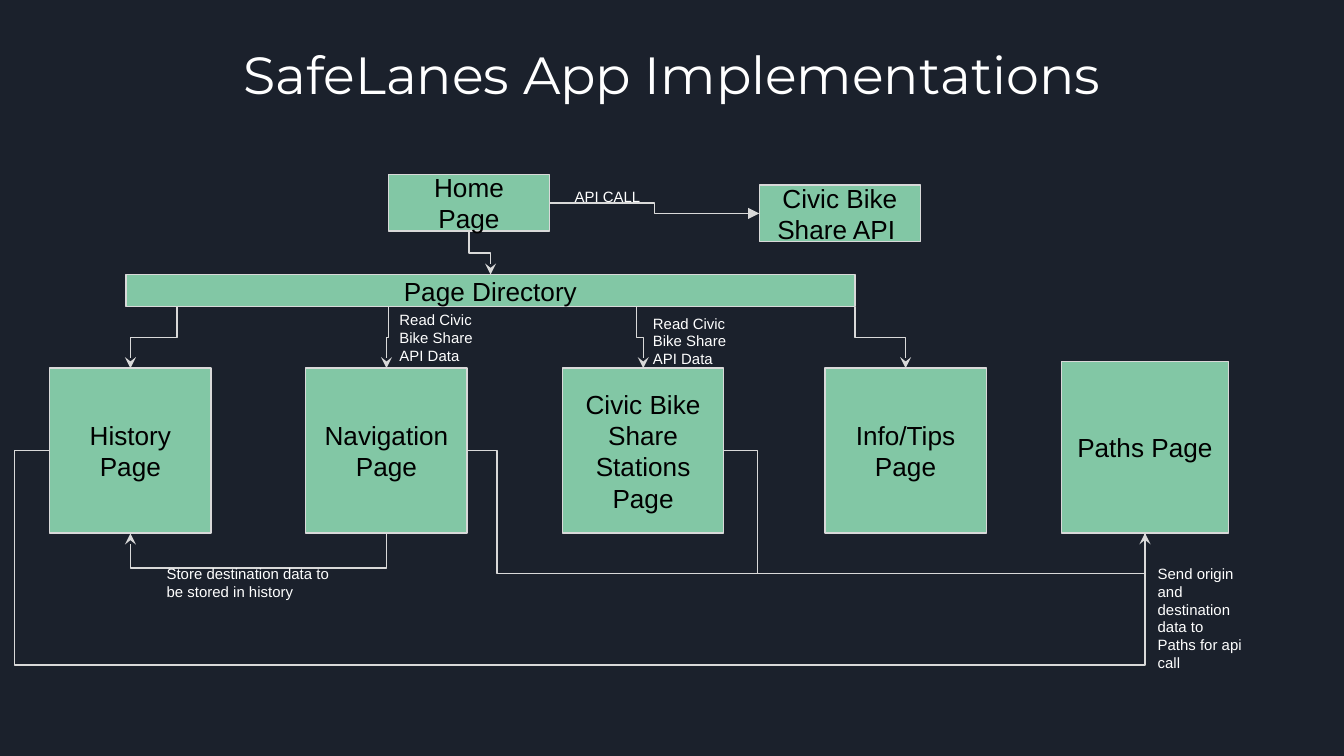
from lxml.etree import SubElement
from pptx import Presentation
from pptx.dml.color import RGBColor
from pptx.enum.shapes import MSO_CONNECTOR as CONN, MSO_SHAPE as SHAPE
from pptx.enum.text import MSO_ANCHOR as ANCHOR, MSO_AUTO_SIZE as AUTO, PP_ALIGN as ALIGN
from pptx.oxml.ns import qn
from pptx.util import Cm, Pt

NAVY = RGBColor(0x1B, 0x21, 0x2C)
GREEN = RGBColor(0x82, 0xC7, 0xA5)
GREY = RGBColor(0xD9, 0xD9, 0xD9)
BLACK = RGBColor(0, 0, 0)
WHITE = RGBColor(0xFF, 0xFF, 0xFF)

TITLE = "SafeLanes App Implementations"
READ = "Read Civic Bike Share API Data"
BOXES = {
    "home": ("Home Page", 7.34, 3.3, 3.05, 1.07),
    "api": ("Civic Bike Share API ", 14.35, 3.5, 3.05, 1.07),
    "directory": ("Page Directory", 2.38, 5.19, 13.78, 0.61),
    "history": ("History Page", 0.94, 6.96, 3.05, 3.12),
    "navigation": ("Navigation Page", 5.78, 6.96, 3.05, 3.12),
    "stations": ("Civic Bike Share Stations Page", 10.63, 6.96, 3.05, 3.12),
    "tips": ("Info/Tips Page", 15.59, 6.96, 3.05, 3.12),
    "paths": ("Paths Page", 20.06, 6.83, 3.16, 3.25),
}
LABELS = [
    ("API CALL", 10.61, 3.3, 2.13, 0.91),
    (READ, 7.3, 5.62, 2.13, 0.91),
    (READ, 12.09, 5.69, 2.13, 0.91),
    ("Store destination data to be stored in history", 2.9, 10.42, 3.96, 0.91),
    ("Send origin and destination data to Paths for api call", 21.63, 10.42, 2.13, 2.34),
]
TOP, BOTTOM, LEFT, RIGHT = (0.5, 0), (0.5, 1), (0, 0.5), (1, 0.5)
DROPS = [
    ("home", BOTTOM, "directory", TOP, None),
    ("directory", (0.07, 1), "history", TOP, None),
    ("directory", (0.36, 1), "navigation", TOP, None),
    ("directory", (0.7, 1), "stations", TOP, None),
    ("directory", (1, 1), "tips", TOP, None),
    ("navigation", BOTTOM, "history", BOTTOM, 0.66),
]
LOOPS = [
    ("navigation", RIGHT, 0.57, 0.76, "stealth"),
    ("history", LEFT, -0.66, 2.49, None),
    ("stations", RIGHT, 0.64, 0.76, None),
]


def write(sp, text, size, color, font="Arial", align=ALIGN.LEFT, anchor=ANCHOR.TOP, inset=0.25):
    tf = sp.text_frame
    tf.text = text
    tf.word_wrap = True
    tf.auto_size = AUTO.NONE
    tf.vertical_anchor = anchor
    tf.margin_left = tf.margin_right = tf.margin_top = tf.margin_bottom = Cm(inset)
    p = tf.paragraphs[0]
    p.alignment = align
    f = p.runs[0].font
    f.size, f.name, f.color.rgb = Pt(size), font, color


def port(name, side):
    x, y, w, h = BOXES[name][1:]
    return x + w * side[0], y + h * side[1]


def connect(s, start, end, adjusts=(0.5,), head="stealth"):
    c = s.shapes.add_connector(CONN.ELBOW, *map(Cm, start + end))
    c.line.color.rgb, c.line.width = GREY, Pt(0.75)
    if head:
        SubElement(c.line._get_or_add_ln(), qn("a:tailEnd"), type=head)
    pr = c._element.spPr
    SubElement(pr, qn("a:effectLst"))
    geom = pr.find(qn("a:prstGeom"))
    geom.set("prst", f"bentConnector{len(adjusts) + 2}")
    av = geom.find(qn("a:avLst"))
    for i, a in enumerate(adjusts, 1):
        name = "adj" if len(adjusts) == 1 else f"adj{i}"
        if len(adjusts) == 1:
            name = "adj1"
        SubElement(av, qn("a:gd"), name=name, fmla=f"val {round(a * 100000)}")
    return c


def connect_down(s, start, end, bend):
    (x1, y1), (x2, y2) = start, end
    run, across = max(abs(y2 - y1), 0.01), abs(x2 - x1)
    c = connect(s, start, end, (bend / run if bend else 0.5,))
    c.left, c.top = Cm((x1 + x2 - run) / 2), Cm((y1 + y2 - across) / 2)
    c.width, c.height = Cm(run), Cm(across)
    xfrm = c._element.spPr.find(qn("a:xfrm"))
    right = x2 > x1
    xfrm.set("rot", str((270 if right else 90) * 60000))
    xfrm.set("flipH", "1" if right else "0")


prs = Presentation()
prs.slide_width, prs.slide_height = Cm(25.4), Cm(14.29)
s = prs.slides.add_slide(prs.slide_layouts[5])
s.background.fill.solid()
s.background.fill.fore_color.rgb = NAVY

title = s.shapes.title
title.left, title.top, title.width, title.height = map(Cm, (0, 0, 25.4, 2.77))
write(title, TITLE, 28, WHITE, "Montserrat", ALIGN.CENTER, ANCHOR.MIDDLE, 0.1)

for text, *place in BOXES.values():
    sp = s.shapes.add_shape(SHAPE.RECTANGLE, *map(Cm, place))
    sp.shadow.inherit = False
    sp.fill.solid()
    sp.fill.fore_color.rgb = GREEN
    sp.line.color.rgb, sp.line.width = GREY, Pt(0.75)
    write(sp, text, 14, BLACK, align=ALIGN.CENTER, anchor=ANCHOR.MIDDLE)

connect(s, port("home", RIGHT), port("api", LEFT), head="triangle")
for a, side_a, b, side_b, bend in DROPS:
    connect_down(s, port(a, side_a), port(b, side_b), bend)
for name, side, out, below, head in LOOPS:
    start, end = port(name, side), port("paths", BOTTOM)
    w, h = end[0] - start[0], end[1] - start[1]
    connect(s, start, end, (out / w, 1 + below / h), head)

for text, *place in LABELS:
    write(s.shapes.add_textbox(*map(Cm, place)), text, 8, WHITE)

prs.save("out.pptx")
